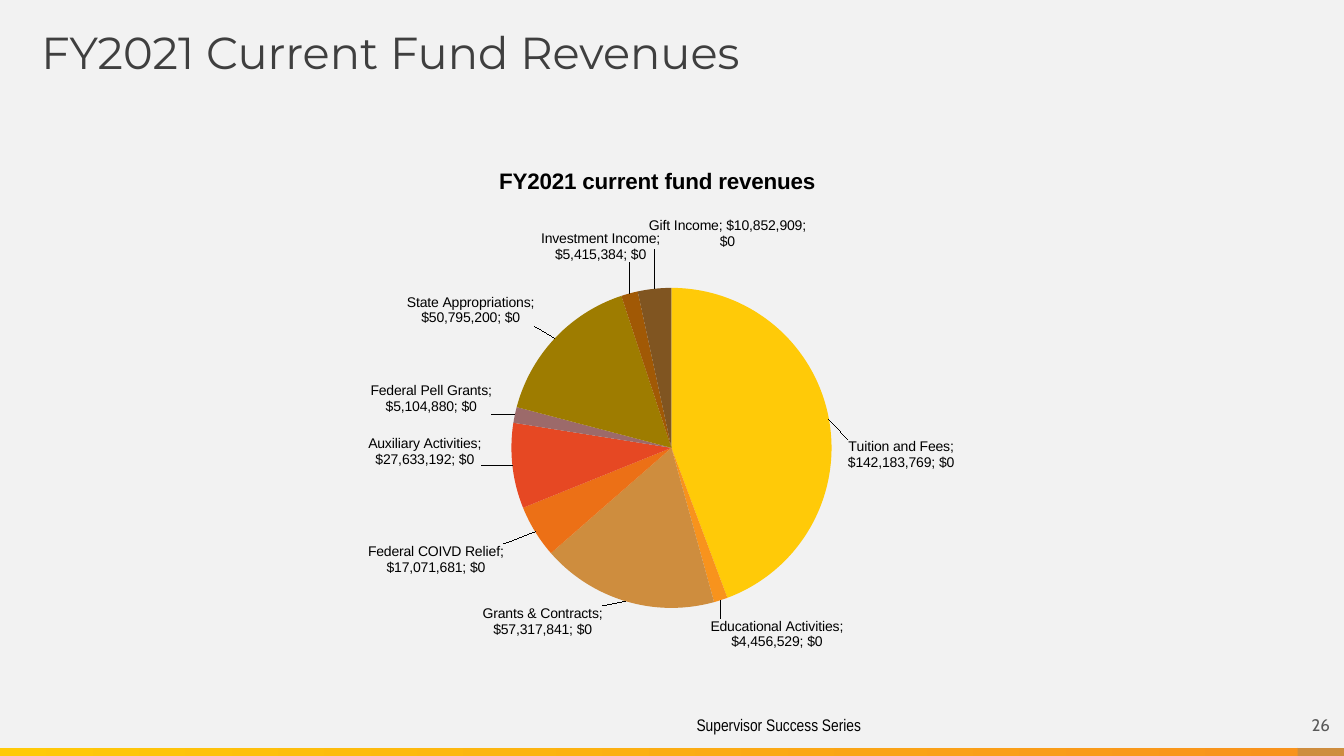
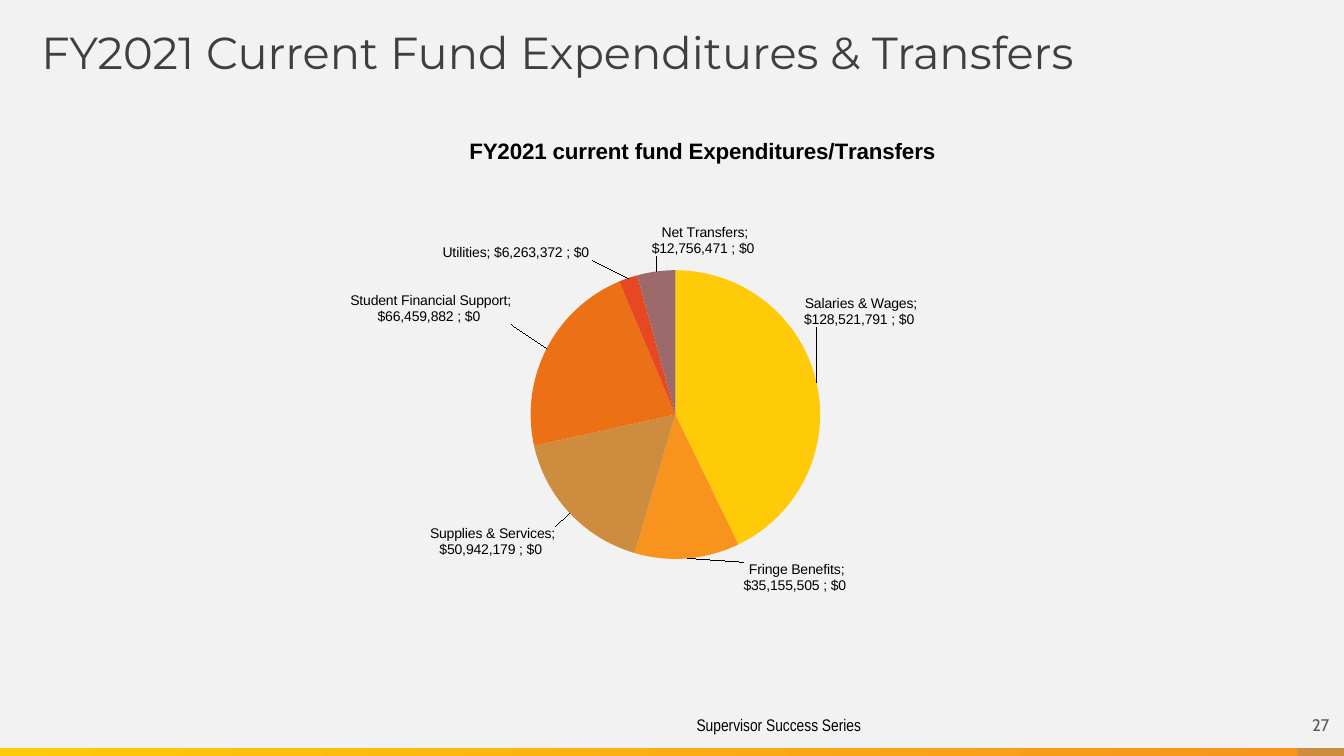
from copy import deepcopy

from lxml.etree import SubElement
from pptx import Presentation
from pptx.chart.data import CategoryChartData
from pptx.dml.color import RGBColor
from pptx.enum.chart import XL_CHART_TYPE, XL_LABEL_POSITION
from pptx.enum.shapes import MSO_SHAPE
from pptx.enum.text import MSO_ANCHOR, PP_ALIGN
from pptx.oxml import parse_xml
from pptx.oxml.ns import nsdecls, qn
from pptx.util import Inches, Pt

PAPER = RGBColor(0xF2, 0xF2, 0xF2)
BLACK = RGBColor(0, 0, 0)
TITLE_GREY = RGBColor(0x3F, 0x3F, 0x3F)
NUMBER_GREY = RGBColor(0x59, 0x59, 0x59)
YELLOW = RGBColor(0xFF, 0xCA, 0x08)
ORANGE = RGBColor(0xF8, 0x93, 0x1D)
TAN = RGBColor(0xCE, 0x8D, 0x3E)
SLICE_COLOURS = [
    YELLOW, ORANGE, TAN,
    RGBColor(0xEC, 0x70, 0x16), RGBColor(0xE6, 0x48, 0x23), RGBColor(0x9C, 0x6A, 0x6A),
    RGBColor(0x9E, 0x7C, 0x00), RGBColor(0xA1, 0x59, 0x05), RGBColor(0x80, 0x55, 0x21),
]

SLIDE_WIDTH, SLIDE_HEIGHT = 13.33, 7.5
BAND_TOP, BAND_HEIGHT = 7.42, 0.08
CORNER_SIZE = 0.46
CORNER_LEFT = SLIDE_WIDTH - CORNER_SIZE

# Each slice: name, dollars, shift of its label in inches from the rim (right, down)
REVENUES = [
    ("Tuition and Fees", 142183769, (0.13, 0.52)),
    ("Educational Activities", 4456529, (-0.12, 0.13)),
    ("Grants & Contracts", 57317841, (-0.21, -0.01)),
    ("Federal COIVD Relief", 17071681, (-0.26, 0.09)),
    ("Auxiliary Activities", 27633192, (-0.25, -0.3)),
    ("Federal Pell Grants", 5104880, (-0.17, 0.01)),
    ("State Appropriations", 50795200, (-0.16, -0.08)),
    ("Investment Income", 5415384, (0.32, -0.25)),
    ("Gift Income", 10852909, (1.51, -0.33)),
]
EXPENDITURES = [
    ("Salaries & Wages", 128521791, (-0.18, -0.53)),
    ("Fringe Benefits", 35155505, (1.08, -0.02)),
    ("Supplies & Services", 50942179, (-0.1, 0.09)),
    ("Student Financial Support", 66459882, (-0.3, -0.21)),
    ("Utilities", 6263372, (-0.33, -0.12)),
    ("Net Transfers", 12756471, (1.02, -0.09)),
]


def inches(*lengths):
    return [Inches(length) for length in lengths]


def style_font(font, name, size, colour, bold=False):
    font.name, font.size, font.bold = name, Pt(size), bold
    font.color.rgb = colour


def write(shape, text, font_name, size, colour, margins=(0, 0)):
    """Fill a shape with one run and return its paragraph."""
    frame = shape.text_frame
    frame.word_wrap = True
    frame.margin_left = frame.margin_right = Inches(margins[0])
    frame.margin_top = frame.margin_bottom = Inches(margins[1])
    para = frame.paragraphs[0]
    span = para.add_run()
    span.text = text
    style_font(span.font, font_name, size, colour)
    return para


def add_rectangle(page, box, colour=None):
    shape = page.shapes.add_shape(MSO_SHAPE.RECTANGLE, *inches(*box))
    shape.shadow.inherit = False
    shape.line.fill.background()
    if colour is not None:
        shape.fill.solid()
        shape.fill.fore_color.rgb = colour
    return shape


def add_page(deck, title, number):
    """Add a slide with the shared background, title, band and footer."""
    page = deck.slides.add_slide(deck.slide_layouts[6])
    page.background.fill.solid()
    page.background.fill.fore_color.rgb = PAPER

    band = add_rectangle(page, (0, BAND_TOP, CORNER_LEFT, BAND_HEIGHT))
    band.fill.gradient()
    band.fill.gradient_angle = 0
    for stop, position, colour in zip(band.fill.gradient_stops, (0, 1), (YELLOW, ORANGE)):
        stop.position = position
        stop.color.rgb = colour
    add_rectangle(page, (CORNER_LEFT, BAND_TOP, CORNER_SIZE, BAND_HEIGHT), TAN)

    footer = page.shapes.add_textbox(*inches(6.81, 7.04, 5.41, 0.5))
    write(footer, "Supervisor Success Series", "Arial Narrow", 12, BLACK, (0.1, 0.05))

    heading = page.shapes.add_textbox(*inches(0.41, 0.31, 12.4, 0.53))
    write(heading, title, "Montserrat", 32, TITLE_GREY).line_spacing = 0.9

    corner = add_rectangle(
        page, (CORNER_LEFT, BAND_TOP - CORNER_SIZE, CORNER_SIZE, CORNER_SIZE), PAPER)
    corner.text_frame.vertical_anchor = MSO_ANCHOR.MIDDLE
    write(corner, str(number), "Cabin", 12, NUMBER_GREY).alignment = PP_ALIGN.CENTER
    return page


def place(parent, index, **settings):
    """Give a chart element a manual layout as its child at index."""
    for old in parent.findall(qn("c:layout")):
        parent.remove(old)
    layout = parse_xml(f"<c:layout {nsdecls('c')}><c:manualLayout/></c:layout>")
    for name, value in settings.items():
        SubElement(layout[0], qn(f"c:{name}")).set("val", str(value))
    parent.insert(index, layout)


def add_labels(series, number_format, shifts):
    """Label every slice, each shifted by a fraction of the chart."""
    labels = series.data_labels
    labels.show_value = labels.show_percentage = labels.show_category_name = True
    labels.number_format = number_format
    labels.number_format_is_linked = False
    labels.position = XL_LABEL_POSITION.OUTSIDE_END
    style_font(labels.font, "Arial", 10, BLACK)

    element = labels._element
    element.find(".//" + qn("a:bodyPr")).set("wrap", "square")
    for old in element.findall(qn("c:showLeaderLines")):
        element.remove(old)
    SubElement(element, qn("c:separator")).text = "; "
    shared = list(element)
    SubElement(element, qn("c:showLeaderLines")).set("val", "1")

    for index, (right, down) in enumerate(shifts):
        label = parse_xml(f'<c:dLbl {nsdecls("c")}><c:idx val="{index}"/></c:dLbl>')
        place(label, 1, x=right, y=down)
        label.extend(deepcopy(child) for child in shared)
        element.insert(index, label)


def add_pie(page, box, title, title_corner, plot_box, slices, number_format):
    names, amounts, shifts = zip(*slices)
    data = CategoryChartData(number_format=number_format)
    data.categories = names
    data.add_series("Series 1", amounts)
    chart = page.shapes.add_chart(XL_CHART_TYPE.PIE, *inches(*box), data).chart
    chart.has_legend = False
    style_font(chart.font, "Arial", 10, BLACK)

    chart.has_title = True
    span = chart.chart_title.text_frame.paragraphs[0].add_run()
    span.text = title
    style_font(span.font, "Arial", 16, BLACK, bold=True)

    root = chart._chartSpace
    edges = {"xMode": "edge", "yMode": "edge"}
    place(root.find(".//" + qn("c:title")), 1, **edges, x=title_corner[0], y=title_corner[1])
    place(root.find(".//" + qn("c:plotArea")), 0, layoutTarget="inner", **edges,
          **dict(zip("xywh", plot_box)))
    root.find(qn("c:chart")).addnext(parse_xml(
        f'<c:spPr {nsdecls("c", "a")}><a:solidFill><a:srgbClr val="{PAPER}"/></a:solidFill>'
        "<a:ln><a:noFill/></a:ln></c:spPr>"))

    plot = chart.plots[0]
    plot.vary_by_categories = True
    series = plot.series[0]
    for index, colour in enumerate(SLICE_COLOURS[:len(slices)]):
        point = series.points[index]
        point.format.fill.solid()
        point.format.fill.fore_color.rgb = colour
        point.format.line.fill.background()
    width, height = box[2:]
    add_labels(series, number_format,
               [(right / width, down / height) for right, down in shifts])


def main():
    deck = Presentation()
    deck.slide_width, deck.slide_height = inches(SLIDE_WIDTH, SLIDE_HEIGHT)

    page = add_page(deck, "FY2021 Current Fund Revenues", 26)
    add_pie(page, (2.52, 1.41, 7.97, 5.04), "FY2021 current fund revenues", (0.3, 0.04),
            (0.138, 0.287, 0.763, 0.63), REVENUES, '"$"#,##0')

    page = add_page(deck, "FY2021 Current Fund Expenditures & Transfers", 27)
    add_pie(page, (2.24, 1.27, 8.19, 4.64), "FY2021 current fund Expenditures/Transfers",
            (0.29, 0.01), (0.175, 0.305, 0.739, 0.619), EXPENDITURES,
            '"$"#,##0_);\\("$"#,##0\\)')

    deck.save("out.pptx")


if __name__ == "__main__":
    main()
